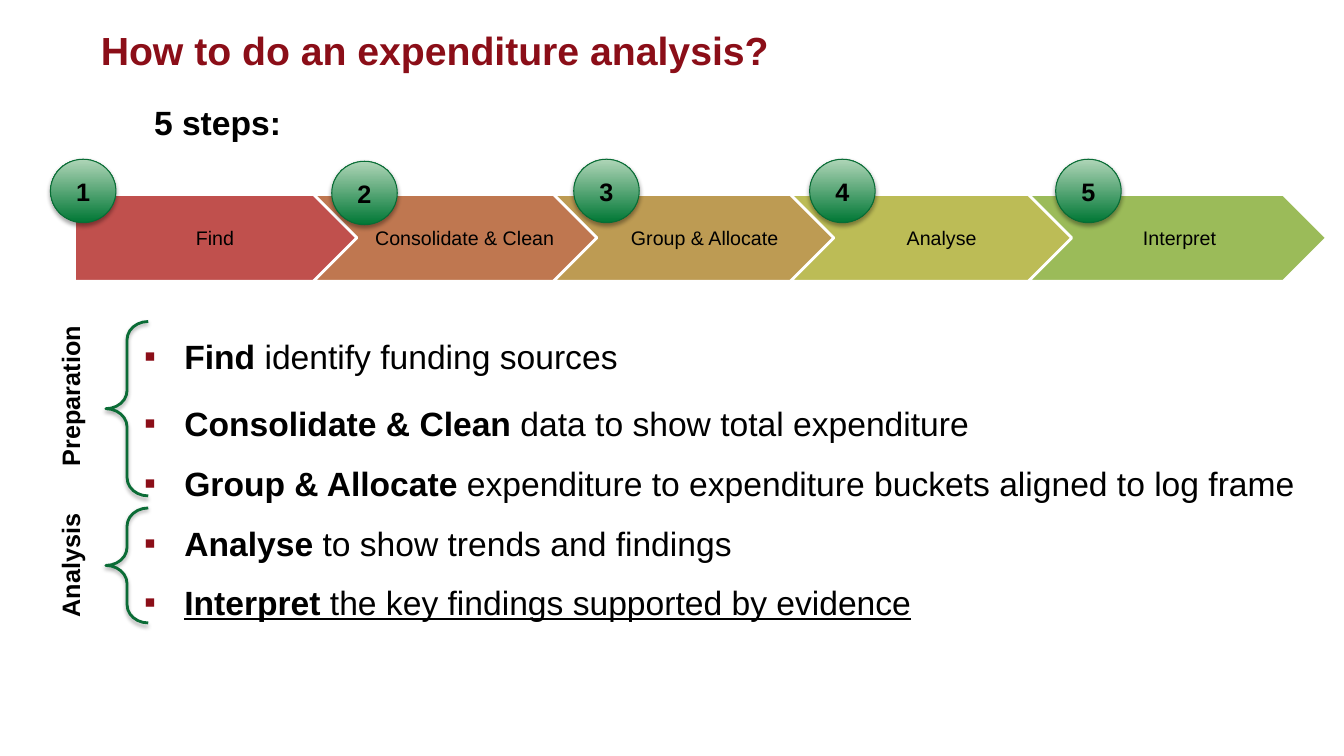
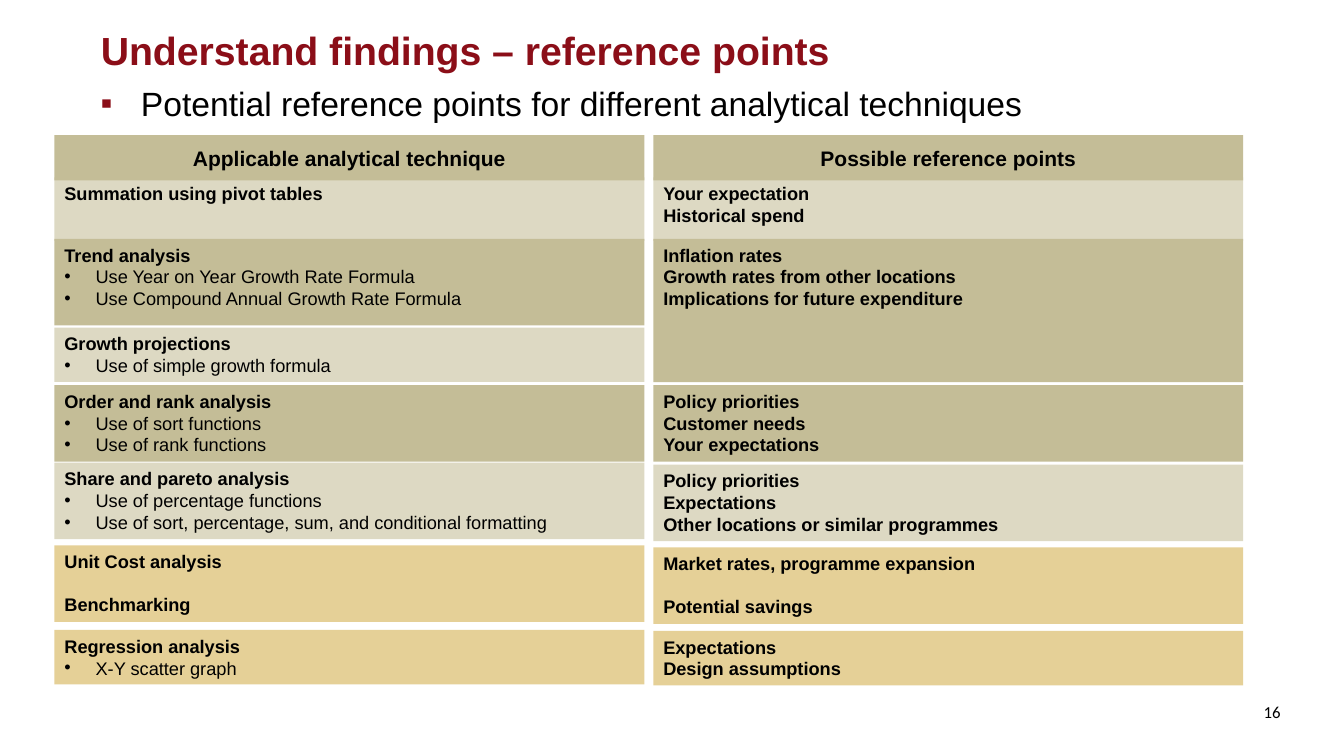
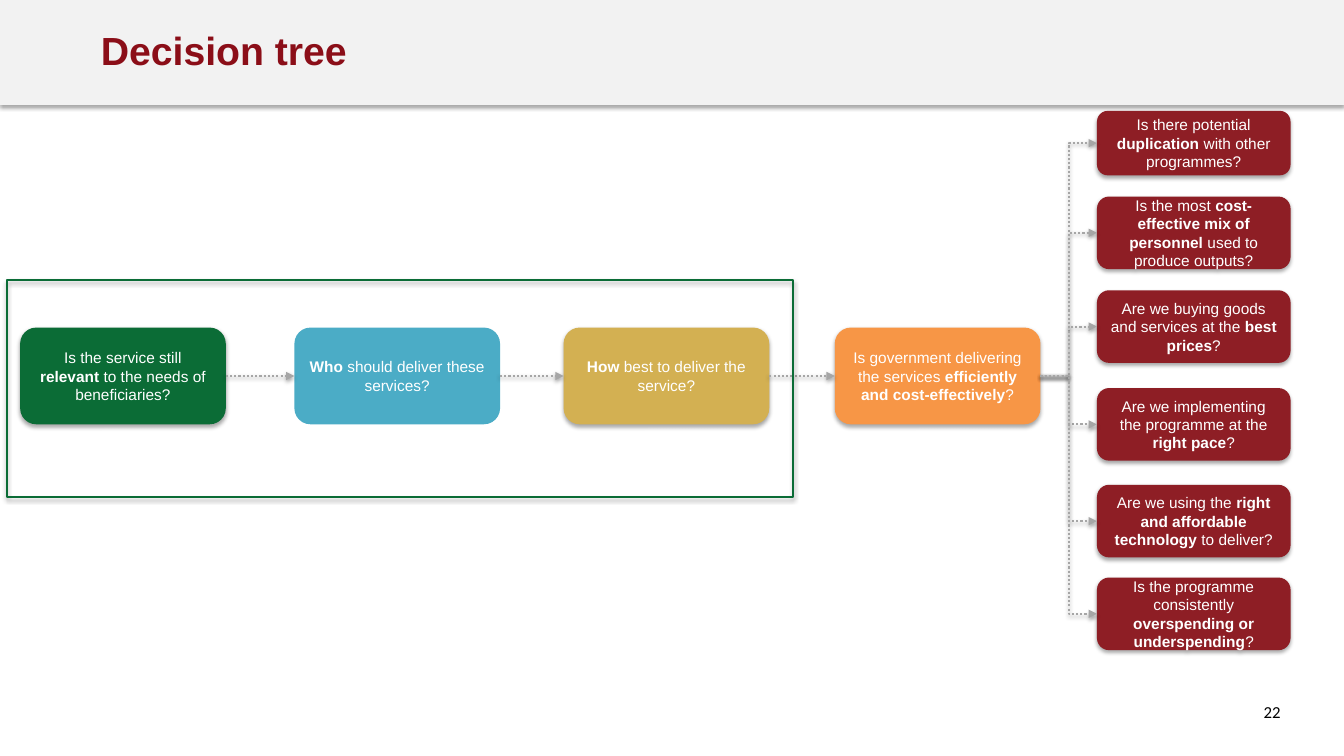
from dataclasses import dataclass
from typing import NamedTuple, Optional

from lxml import etree
from pptx import Presentation
from pptx.dml.color import RGBColor
from pptx.enum.dml import MSO_LINE
from pptx.enum.shapes import MSO_CONNECTOR as CXN, MSO_SHAPE as SHAPE
from pptx.enum.text import MSO_ANCHOR as ANCHOR, MSO_AUTO_SIZE as FIT, PP_ALIGN as ALIGN
from pptx.oxml.ns import qn
from pptx.util import Inches, Pt


# Theme: colours, fonts and type sizes
@dataclass(frozen=True)
class Theme:
    font: str = "Arial"
    number_font: str = "Calibri"
    title: str = "8B0E18"
    text: str = "000000"
    white: str = "FFFFFF"
    green: str = "0B6C36"
    badge_line: str = "086C35"
    badge_dark: str = "007735"
    badge_light: str = "AFD5B7"
    band: str = "F2F2F2"
    arrow: str = "A6A6A6"
    branch: str = "8E1E25"
    khaki: str = "C4BD97"
    sand: str = "DDD9C3"
    gold: str = "E5D097"
    title_size: float = 28
    body_size: float = 24
    label_size: float = 18
    header_size: float = 15
    step_size: float = 14
    cell_size: float = 13
    number_size: float = 12
    node_size: float = 11


T = Theme()


class Area(NamedTuple):
    left: float
    top: float
    width: float
    height: float


class Step(NamedTuple):
    label: str
    fill: str
    left: float
    badge_left: float
    badge_top: float = 1.58


class Group(NamedTuple):
    label: str
    label_top: float
    brace_top: float
    brace_height: float


class Item(NamedTuple):
    text: str
    before: float = 6.3
    underline: bool = False


class Cell(NamedTuple):
    top: float
    height: float
    fill: str
    heads: tuple
    bullets: tuple = ()
    gap: float = 0


class Column(NamedTuple):
    left: float
    header: str
    cells: tuple


class Stage(NamedTuple):
    left: float
    fill: str
    text: str
    shadow: bool = True


class Branch(NamedTuple):
    top: float
    height: float
    text: str


# Shared helpers
def style(font, size: float, color: str = T.text, bold: bool = False, name: str = T.font) -> None:
    font.name, font.size, font.bold = name, Pt(size), bold
    font.color.rgb = RGBColor.from_string(color)


def add_rich(p, text: str, size: float, color: str = T.text) -> None:
    """Write text in which *stars* enclose the bold parts."""
    for i, part in enumerate(text.split("*")):
        if part:
            r = p.add_run()
            r.text = part
            style(r.font, size, color, bold=i % 2 == 1)


def add_bullet(p, char: str, indent: float, color: Optional[str] = None) -> None:
    pPr = p._p.get_or_add_pPr()
    pPr.set("marL", str(Inches(indent)))
    pPr.set("indent", str(-Inches(indent)))
    if color:
        clr = etree.SubElement(pPr, qn("a:buClr"))
        etree.SubElement(clr, qn("a:srgbClr"), val=color)
    etree.SubElement(pPr, qn("a:buFont"), typeface=T.font)
    etree.SubElement(pPr, qn("a:buChar"), char=char)


def add_shadow(effects, alpha: int, dist: float) -> None:
    shadow = etree.SubElement(effects, qn("a:outerShdw"), blurRad=str(Pt(3.1)),
                              dist=str(Pt(dist)), dir="5400000", rotWithShape="0")
    clr = etree.SubElement(shadow, qn("a:srgbClr"), val="000000")
    etree.SubElement(clr, qn("a:alpha"), val=str(alpha * 1000))


def add_box(s, kind, area: Area, fill: Optional[str] = None, line: Optional[str] = None,
            weight: float = 1, shadow: bool = False):
    sp = s.shapes.add_shape(kind, *map(Inches, area))
    sp.shadow.inherit = False
    if shadow:
        add_shadow(sp._element.spPr.find(qn("a:effectLst")), 35, 1.8)
    if fill:
        sp.fill.solid()
        sp.fill.fore_color.rgb = RGBColor.from_string(fill)
    else:
        sp.fill.background()
    if line:
        sp.line.color.rgb = RGBColor.from_string(line)
        sp.line.width = Pt(weight)
    else:
        sp.line.fill.background()
    return sp


def add_text(s, area: Area, text: str = "", size: float = T.body_size, bold: bool = False,
             align=ALIGN.LEFT, name: str = T.font):
    sp = s.shapes.add_textbox(*map(Inches, area))
    tf = sp.text_frame
    tf.word_wrap = True
    p = tf.paragraphs[0]
    p.alignment = align
    if text:
        p.text = text
        style(p.runs[0].font, size, bold=bold, name=name)
    return sp


def add_label(sp, text: str, size: float, color: str = T.text) -> None:
    """Centre rich text in a shape."""
    tf = sp.text_frame
    tf.word_wrap = True
    tf.vertical_anchor = ANCHOR.MIDDLE
    p = tf.paragraphs[0]
    p.alignment = ALIGN.CENTER
    add_rich(p, text, size, color)


def add_arrow(s, kind, src, dst) -> None:
    """Join the right side of one box to the left side of another."""
    cxn = s.shapes.add_connector(kind, src.left + src.width, src.top + src.height // 2,
                                 dst.left, dst.top + dst.height // 2)
    cxn.begin_connect(src, 3)
    cxn.end_connect(dst, 1)
    cxn.line.color.rgb = RGBColor.from_string(T.arrow)
    cxn.line.width = Pt(1.5)
    cxn.line.dash_style = MSO_LINE.ROUND_DOT
    spPr = cxn._element.spPr
    etree.SubElement(spPr.find(qn("a:ln")), qn("a:tailEnd"), type="triangle")
    add_shadow(etree.SubElement(spPr, qn("a:effectLst")), 38, 1.6)


def add_slide(prs, title: str, number: str = ""):
    s = prs.slides.add_slide(prs.slide_layouts[5])
    sp = s.shapes.title
    sp.left, sp.top, sp.width, sp.height = map(Inches, Area(0.9, 0.27, 11.51, 0.45))
    tf = sp.text_frame
    tf.text = title
    tf.word_wrap = True
    tf.auto_size = FIT.NONE
    tf.vertical_anchor = ANCHOR.MIDDLE
    p = tf.paragraphs[0]
    p.alignment = ALIGN.LEFT
    style(p.runs[0].font, T.title_size, T.title, bold=True)
    if number:
        add_text(s, Area(12.04, 6.91, 0.76, 0.39), number, T.number_size,
                 align=ALIGN.RIGHT, name=T.number_font)
    return s


# Slide 1: the five steps
STEPS = (
    Step("Find", "C0504D", 0.74, 0.5),
    Step("Consolidate & Clean", "BF7750", 3.11, 3.29, 1.6),
    Step("Group & Allocate", "BD9B53", 5.49, 5.69),
    Step("Analyse", "BCBC56", 7.84, 8.03),
    Step("Interpret", "9BBB59", 10.2, 10.47),
)
ITEMS = (
    Item("*Find *identify funding sources", 0),
    Item("*Consolidate & Clean *data to show total expenditure", 12),
    Item("*Group & Allocate *expenditure to expenditure buckets aligned to log frame"),
    Item("*Analyse* to show trends and findings"),
    Item("*Interpret *the key findings supported by evidence", underline=True),
)
GROUPS = (
    Group("Preparation", 3.73, 3.19, 1.73),
    Group("Analysis", 5.41, 5.04, 1.14),
)


def add_badge(s, step: Step, number: int) -> None:
    sp = add_box(s, SHAPE.OVAL, Area(step.badge_left, step.badge_top, 0.65, 0.63),
                 line=T.badge_line, weight=0.75, shadow=True)
    sp.fill.gradient()
    sp.fill.gradient_angle = 90
    for stop, color in zip(sp.fill.gradient_stops, (T.badge_dark, T.badge_light)):
        stop.color.rgb = RGBColor.from_string(color)
    add_label(sp, f"*{number}*", T.label_size)


def build_steps(prs) -> None:
    s = add_slide(prs, "How to do an expenditure analysis?")
    add_text(s, Area(1.43, 0.96, 3, 0.48), "5 steps:", bold=True)

    # Chevron process
    for i, step in enumerate(STEPS):
        kind = SHAPE.CHEVRON if i else SHAPE.PENTAGON
        sp = add_box(s, kind, Area(step.left, 1.93, 2.96, 0.86), step.fill, T.white, 2)
        tf = sp.text_frame
        tf.margin_left, tf.margin_right = Inches(0.06), Inches(0.02)
        add_label(sp, step.label, T.step_size)

    # Step descriptions
    tf = add_text(s, Area(1.33, 3.28, 11.75, 2.95)).text_frame
    for i, item in enumerate(ITEMS):
        p = tf.add_paragraph() if i else tf.paragraphs[0]
        add_bullet(p, "▪", 0.4, T.title)
        p.space_before, p.space_after = Pt(item.before), Pt(7.5)
        add_rich(p, item.text, T.body_size)
        for r in p.runs:
            r.font.underline = item.underline

    # Braces with turned labels
    for group in GROUPS:
        sp = add_text(s, Area(-0.45, group.label_top, 2.29, 0.4), group.label,
                      T.label_size, bold=True, align=ALIGN.CENTER)
        sp.rotation = 270
        brace = add_box(s, SHAPE.LEFT_BRACE, Area(1.05, group.brace_top, 0.42, group.brace_height),
                        line=T.green, weight=2, shadow=True)
        brace.adjustments[0] = 0.43

    for number, step in enumerate(STEPS, 1):
        add_badge(s, step, number)


# Slide 2: techniques and their reference points
COLUMNS = (
    Column(0.54, "Applicable analytical technique", (
        Cell(1.76, 0.63, T.sand, ("Summation using pivot tables",)),
        Cell(2.37, 0.86, T.khaki, ("Trend analysis",),
             ("Use Year on Year Growth Rate Formula", "Use Compound Annual Growth Rate Formula")),
        Cell(3.25, 0.54, T.sand, ("Growth projections",), ("Use of simple growth formula",)),
        Cell(3.82, 0.76, T.khaki, ("Order and rank analysis",),
             ("Use of sort functions", "Use of rank functions")),
        Cell(4.59, 0.76, T.sand, ("Share and pareto analysis",),
             ("Use of percentage functions",
              "Use of sort, percentage, sum, and conditional formatting")),
        Cell(5.41, 0.76, T.gold, ("Unit Cost analysis", "Benchmarking"), gap=15),
        Cell(6.25, 0.54, T.gold, ("Regression analysis",), ("X-Y scatter graph",)),
    )),
    Column(6.48, "Possible reference points", (
        Cell(1.76, 0.63, T.sand, ("Your expectation", "Historical spend")),
        Cell(2.37, 1.42, T.khaki, ("Inflation rates", "Growth rates from other locations",
                                   "Implications for future expenditure")),
        Cell(3.82, 0.76, T.khaki, ("Policy priorities", "Customer needs", "Your expectations")),
        Cell(4.61, 0.76, T.sand, ("Policy priorities", "Expectations",
                                  "Other locations or similar programmes")),
        Cell(5.43, 0.76, T.gold, ("Market rates, programme expansion", "Potential savings"),
             gap=15),
        Cell(6.26, 0.54, T.gold, ("Expectations", "Design assumptions")),
    )),
)
COLUMN_WIDTH = 5.85


def add_cell(s, left: float, cell: Cell) -> None:
    sp = add_box(s, SHAPE.RECTANGLE, Area(left, cell.top, COLUMN_WIDTH, cell.height), cell.fill)
    tf = sp.text_frame
    tf.word_wrap = True
    tf.vertical_anchor = ANCHOR.TOP
    for i, text in enumerate(cell.heads + cell.bullets):
        p = tf.add_paragraph() if i else tf.paragraphs[0]
        is_head = i < len(cell.heads)
        if not is_head:
            add_bullet(p, "•", 0.31)
        p.alignment = ALIGN.LEFT
        if i:
            p.space_before = Pt(cell.gap)
        p.text = text
        style(p.runs[0].font, T.cell_size, bold=is_head)


def build_reference_points(prs) -> None:
    s = add_slide(prs, "Understand findings – reference points", "16")
    sp = add_text(s, Area(0.9, 0.77, 11.51, 0.45),
                  "Potential reference points for different analytical techniques")
    add_bullet(sp.text_frame.paragraphs[0], "▪", 0.4, T.title)
    for column in COLUMNS:
        for cell in column.cells:
            add_cell(s, column.left, cell)
        header = add_box(s, SHAPE.RECTANGLE, Area(column.left, 1.34, COLUMN_WIDTH, 0.45), T.khaki)
        add_label(header, f"*{column.header}*", T.header_size)


# Slide 3: decision tree
STAGES = (
    Stage(0.2, T.green, "Is the service still *relevant* to the needs of beneficiaries?"),
    Stage(2.92, "4BACC6", "*Who* should deliver these services?", shadow=False),
    Stage(5.59, "D3B052", "*How* best to deliver the service?"),
    Stage(8.28, "F79646",
          "Is government delivering the services *efficiently and cost-effectively*?"),
)
BRANCHES = (
    Branch(1.1, 0.64, "Is there potential *duplication* with other programmes?"),
    Branch(1.95, 0.72, "Is the most *cost-effective mix of personnel* used to produce outputs?"),
    Branch(2.88, 0.72, "Are we buying goods and services at the *best prices*?"),
    Branch(3.85, 0.72, "Are we implementing the programme at the *right pace*?"),
    Branch(4.81, 0.72, "Are we using the *right and affordable technology *to deliver?"),
    Branch(5.73, 0.72, "Is the programme consistently *overspending or underspending*?"),
)


def add_node(s, area: Area, fill: str, text: str, shadow: bool = True):
    sp = add_box(s, SHAPE.ROUNDED_RECTANGLE, area, fill, shadow=shadow)
    add_label(sp, text, T.node_size, T.white)
    return sp


def build_decision_tree(prs) -> None:
    s = add_slide(prs, "Decision tree", "22")
    band = add_box(s, SHAPE.RECTANGLE, Area(0, 0, 13.33, 1.04), T.band, shadow=True)
    s.shapes.title.element.addprevious(band.element)

    stages = [add_node(s, Area(st.left, 3.25, 2.04, 0.96), st.fill, st.text, st.shadow)
              for st in STAGES]
    branches = [add_node(s, Area(10.88, b.top, 1.92, b.height), T.branch, b.text)
                for b in BRANCHES]
    for src, dst in zip(stages, stages[1:]):
        add_arrow(s, CXN.STRAIGHT, src, dst)
    for branch in branches:
        add_arrow(s, CXN.ELBOW, stages[-1], branch)

    # Frame around the first three stages
    add_box(s, SHAPE.RECTANGLE, Area(0.07, 2.78, 7.8, 2.15), line=T.green, weight=1.5, shadow=True)


def main() -> None:
    prs = Presentation()
    prs.slide_width, prs.slide_height = Inches(13.33), Inches(7.5)
    build_steps(prs)
    build_reference_points(prs)
    build_decision_tree(prs)
    prs.save("out.pptx")


if __name__ == "__main__":
    main()
